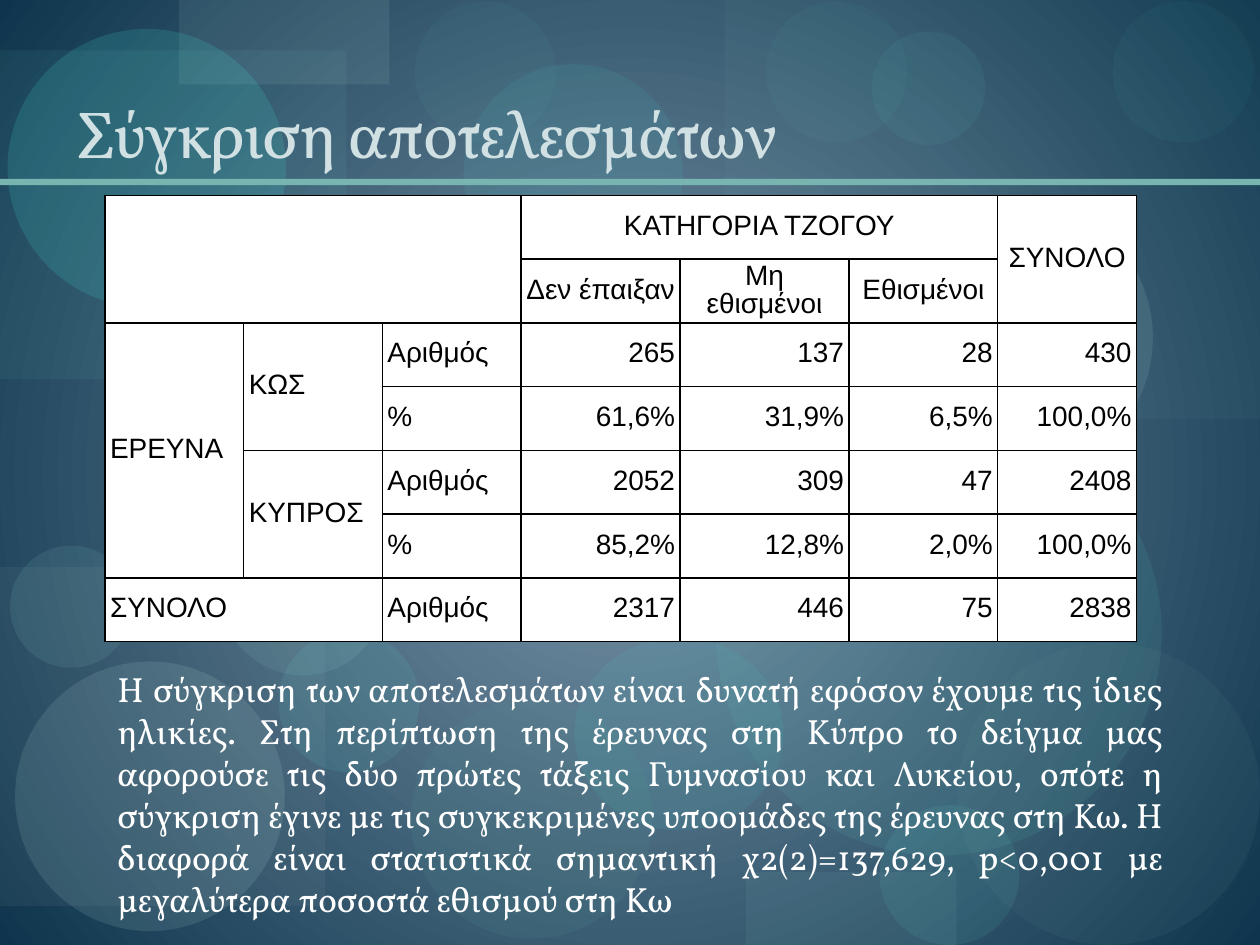
import dataclasses

import pptx
import pptx.dml.color
import pptx.enum.dml
import pptx.enum.shapes
import pptx.enum.text
import pptx.oxml
import pptx.oxml.ns
import pptx.util

ALIGN = pptx.enum.text.PP_ALIGN
ANCHOR = pptx.enum.text.MSO_ANCHOR
SHAPE = pptx.enum.shapes.MSO_SHAPE
RECT, DISC = SHAPE.RECTANGLE, SHAPE.OVAL
GRID_COLUMNS, GRID_ROWS = 120, 90


@dataclasses.dataclass(frozen=True)
class Theme:
    glow: str = "7B96AA"
    deep: str = "0E354D"
    rule: str = "79B5B0"
    title: str = "D1E1E3"
    body: str = "FFFFFF"
    paper: str = "FFFFFF"
    ink: str = "000000"
    text_font: str = "Vollkorn"
    table_font: str = "Arial"
    title_size: int = 38
    body_size: int = 20
    table_size: int = 16


@dataclasses.dataclass(frozen=True)
class Box:
    left: int
    top: int
    width: int
    height: int

    def area(self, column, row, columns, rows):
        """Box given in columns and rows of the grid laid over this box."""
        across, down = self.width / GRID_COLUMNS, self.height / GRID_ROWS
        return Box(int(self.left + column * across), int(self.top + row * down),
                   int(columns * across), int(rows * down))

    def at(self):
        return self.left, self.top, self.width, self.height


THEME = Theme()

# Kind, left, top, width, height (percent of slide width), colour, opacity %
DECOR = [
    (RECT, 10, 25.1, 30, 23.3, "79B5B0", 9),
    (DISC, 32.6, 55.5, 19.2, 19, "549791", 13),
    (RECT, 57.5, 0, 42.5, 33.3, "79B5B0", 6),
    (RECT, 0, 45, 25.8, 26.9, "B2B7BA", 8),
    (DISC, 45.7, 26.1, 23.8, 23.8, "70A39E", 8),
    (DISC, 69.8, 63.9, 11.1, 11.1, "65E8DC", 9),
    (DISC, 69.1, 15.6, 22.4, 22.4, "C1E8E4", 11),
    (DISC, 1.2, 52.5, 21.4, 21.4, "C1E8E4", 12),
    (DISC, 22.1, 50.1, 11.2, 11.2, "65E8DC", 9),
    (DISC, 45.6, 50.6, 16.6, 15.3, "44EADC", 8),
    (RECT, 0, 4, 27.5, 26.1, "77D6CE", 7),
    (RECT, 14.2, 0, 16.7, 6.7, "BED7D4", 10),
    (DISC, 0.6, 2.3, 22.1, 22.1, "44EADC", 15),
    (DISC, 0.8, 43.3, 9.7, 9.7, "97DCD6", 10),
    (DISC, 23.2, 16.5, 15.3, 15.3, "65E8DC", 9),
    (DISC, 36.8, 5.1, 17.4, 17.4, "44EADC", 8),
    (DISC, 56.8, 32.5, 35.4, 35.4, "61CDC4", 10),
    (DISC, 60.8, 0.1, 11.2, 11.2, "65E8DC", 4),
    (DISC, 76, 51, 24, 24, "70A39E", 8),
    (DISC, 17.5, 40.5, 13.1, 13.1, "97DCD6", 10),
    (DISC, 69.2, 2.5, 9, 9, "65E8DC", 6),
    (DISC, 88.3, 0.1, 11.2, 11.2, "65E8DC", 4),
    (RECT, 59.2, 69.2, 16.7, 5.8, "79B5B0", 10),
    (DISC, 32.9, 0.1, 11.2, 11.2, "65E8DC", 4),
    (RECT, 0, 14.2, 100, 0.5, THEME.rule, 100),
]

TITLE = "Σύγκριση αποτελεσμάτων"
COMMENT = (
    "Η σύγκριση των αποτελεσμάτων είναι δυνατή εφόσον έχουμε τις ίδιες ηλικίες. "
    "Στη περίπτωση της έρευνας στη Κύπρο το δείγμα μας αφορούσε τις δύο πρώτες τάξεις "
    "Γυμνασίου και Λυκείου, οπότε η σύγκριση έγινε με τις συγκεκριμένες υποομάδες της "
    "έρευνας στη Κω. Η διαφορά είναι στατιστικά σημαντική χ2(2)=137,629, p<0,001 με "
    "μεγαλύτερα ποσοστά εθισμού στη Κω")

HEADER_ROWS, LABEL_COLUMNS = 2, 3
COLUMN_WEIGHTS = [1.1, 1.1, 1.1, 1.26, 1.34, 1.18, 1.1]
RESULTS = [
    ["", "", "", "ΚΑΤΗΓΟΡΙΑ ΤΖΟΓΟΥ", "", "", "ΣΥΝΟΛΟ"],
    ["", "", "", "Δεν έπαιξαν", "Μη εθισμένοι", "Εθισμένοι", ""],
    ["ΕΡΕΥΝΑ", "ΚΩΣ", "Αριθμός", "265", "137", "28", "430"],
    ["", "", "%", "61,6%", "31,9%", "6,5%", "100,0%"],
    ["", "ΚΥΠΡΟΣ", "Αριθμός", "2052", "309", "47", "2408"],
    ["", "", "%", "85,2%", "12,8%", "2,0%", "100,0%"],
    ["ΣΥΝΟΛΟ", "", "Αριθμός", "2317", "446", "75", "2838"],
]
# First cell and last cell of each merged block
MERGES = [((0, 0), (1, 2)), ((0, 3), (0, 5)), ((0, 6), (1, 6)), ((2, 0), (5, 0)),
          ((2, 1), (3, 1)), ((4, 1), (5, 1)), ((6, 0), (6, 1))]


def rgb(code):
    return pptx.dml.color.RGBColor.from_string(code)


def add_xml(parent, xml):
    namespace = pptx.oxml.ns.nsdecls("a")
    parent.append(pptx.oxml.parse_xml(xml.replace("NS", namespace, 1)))


def style(paragraph, font, size, colour, align):
    paragraph.alignment = align
    paragraph.font.name = font
    paragraph.font.size = pptx.util.Pt(size)
    paragraph.font.color.rgb = rgb(colour)


def paint_background(slide, page):
    # Radial gradient, light in the middle
    fill = slide.background.fill
    fill.gradient()
    for stop, colour in zip(fill.gradient_stops, (THEME.glow, THEME.deep)):
        stop.color.rgb = rgb(colour)
    gradient = slide.background._cSld.find(".//" + pptx.oxml.ns.qn("a:gradFill"))
    gradient.remove(gradient.find(pptx.oxml.ns.qn("a:lin")))
    add_xml(gradient, '<a:path NS path="circle"><a:fillToRect l="50000" t="50000" '
                      'r="50000" b="50000"/></a:path>')

    # Translucent discs and blocks, then the rule under the title
    for kind, *place, colour, opacity in DECOR:
        left, top, width, height = (int(share / 100 * page.width) for share in place)
        decor = slide.shapes.add_shape(kind, left, top, width, height)
        decor.shadow.inherit = False
        decor.line.fill.background()
        decor.fill.solid()
        decor.fill.fore_color.rgb = rgb(colour)
        tint = decor._element.spPr.find(".//" + pptx.oxml.ns.qn("a:srgbClr"))
        add_xml(tint, f'<a:alpha NS val="{opacity * 1000}"/>')


def place_title(slide, box):
    title = slide.shapes.title
    title._element.getparent().append(title._element)  # in front of the decoration
    title.left, title.top, title.width, title.height = box.at()
    frame = title.text_frame
    frame.text = TITLE
    frame.word_wrap = True
    frame.auto_size = pptx.enum.text.MSO_AUTO_SIZE.NONE
    frame.vertical_anchor = ANCHOR.BOTTOM
    heading = frame.paragraphs[0]
    style(heading, THEME.text_font, THEME.title_size, THEME.title, ALIGN.LEFT)
    heading.runs[0].font._element.set("spc", "-100")


def format_cell(cell, text, align):
    cell.margin_left = cell.margin_right = cell.margin_top = cell.margin_bottom = 0
    cell.vertical_anchor = ANCHOR.MIDDLE
    for side in ("lnL", "lnR", "lnT", "lnB"):
        add_xml(cell._tc.get_or_add_tcPr(),
                f'<a:{side} NS w="12700"><a:solidFill><a:srgbClr val="{THEME.ink}"/>'
                f'</a:solidFill></a:{side}>')
    cell.fill.solid()
    cell.fill.fore_color.rgb = rgb(THEME.paper)
    cell.text = text
    entry = cell.text_frame.paragraphs[0]
    entry.line_spacing = pptx.util.Pt(THEME.table_size)
    style(entry, THEME.table_font, THEME.table_size, THEME.ink, align)
    for margin in ("marL", "marR"):
        entry._p.get_or_add_pPr().set(margin, str(pptx.util.Inches(0.04)))


def place_results(slide, box):
    results = slide.shapes.add_table(len(RESULTS), len(COLUMN_WEIGHTS), *box.at()).table
    results.first_row = results.horz_banding = False
    for column, weight in zip(results.columns, COLUMN_WEIGHTS):
        column.width = int(box.width * weight / sum(COLUMN_WEIGHTS))
    for r, row in enumerate(RESULTS):
        for c, text in enumerate(row):
            align = (ALIGN.CENTER if r < HEADER_ROWS
                     else ALIGN.LEFT if c < LABEL_COLUMNS else ALIGN.RIGHT)
            format_cell(results.cell(r, c), text, align)
    for first, last in MERGES:
        results.cell(*first).merge(results.cell(*last))


def place_comment(slide, box):
    frame = slide.shapes.add_textbox(*box.at()).text_frame
    frame.word_wrap = True
    frame.text = COMMENT
    style(frame.paragraphs[0], THEME.text_font, THEME.body_size, THEME.body, ALIGN.JUSTIFY)


def main():
    deck = pptx.Presentation()
    deck.slide_width, deck.slide_height = pptx.util.Inches(10), pptx.util.Inches(7.5)
    page = Box(0, 0, deck.slide_width, deck.slide_height)
    slide = deck.slides.add_slide(deck.slide_layouts[5])  # title only
    paint_background(slide, page)
    place_title(slide, page.area(6, 2, 108, 15))
    place_results(slide, page.area(10, 18.6, 98.25, 42.5))
    place_comment(slide, page.area(10, 63, 102, 25.5))
    deck.save("out.pptx")


if __name__ == "__main__":
    main()
